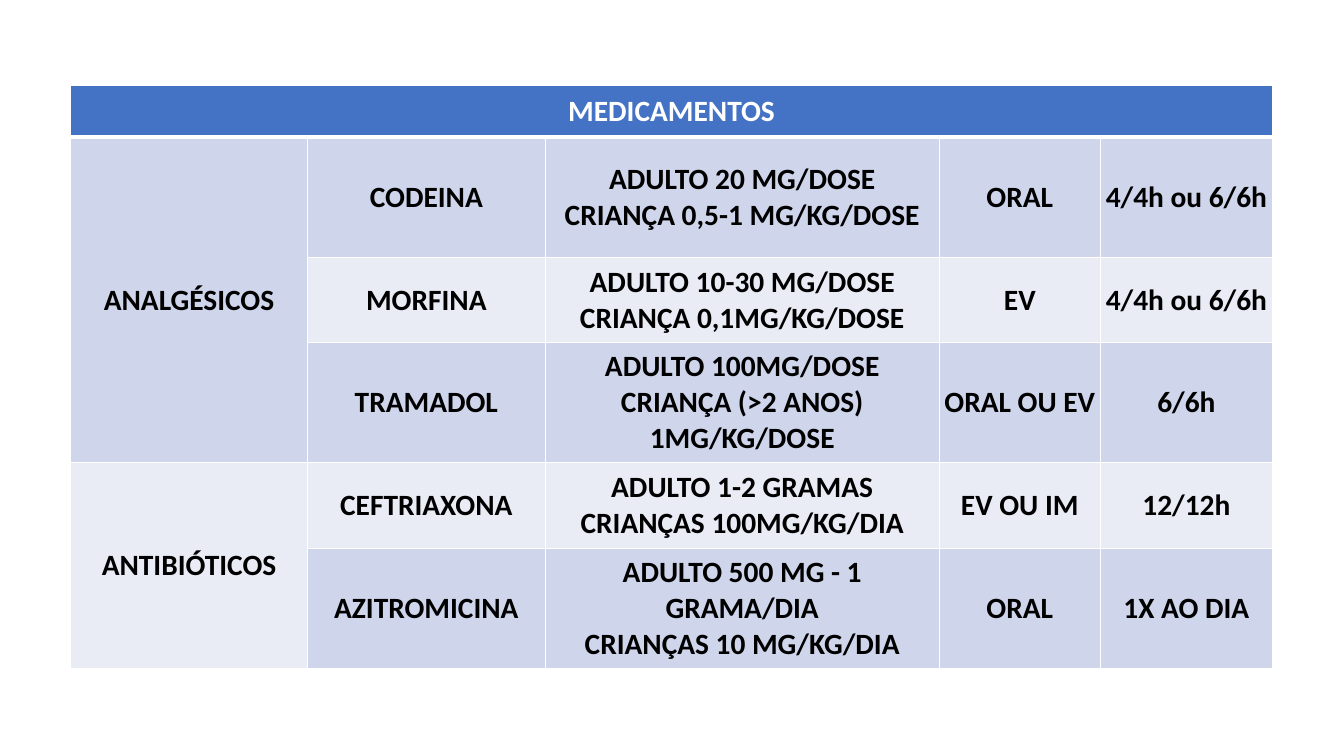
import pptx
import pptx.dml.color
import pptx.enum.text
import pptx.oxml
import pptx.oxml.ns
import pptx.util

Cm = pptx.util.Cm
Pt = pptx.util.Pt

WHITE, BLACK, BLUE = "FFFFFF", "000000", "4472C4"
BANDS = ["CFD5EA", "E9EBF5"]
COLS = [5.97, 5.99, 9.93, 4.06, 4.34]
ROWS = [1.3, 3.02, 2.16, 3.02, 2.16, 3.02]

# Group name, then its drugs: name, dose, route, interval
GROUPS = [
    ("ANALGÉSICOS", [
        ("CODEINA", "ADULTO 20 MG/DOSE\nCRIANÇA 0,5-1 MG/KG/DOSE",
         "ORAL", "4/4h ou 6/6h"),
        ("MORFINA", "ADULTO 10-30 MG/DOSE\nCRIANÇA 0,1MG/KG/DOSE",
         "EV", "4/4h ou 6/6h"),
        ("TRAMADOL", "ADULTO 100MG/DOSE\nCRIANÇA (>2 ANOS) 1MG/KG/DOSE",
         "ORAL OU EV", "6/6h"),
    ]),
    ("ANTIBIÓTICOS", [
        ("CEFTRIAXONA", "ADULTO 1-2 GRAMAS\nCRIANÇAS 100MG/KG/DIA",
         "EV OU IM", "12/12h"),
        ("AZITROMICINA", "ADULTO 500 MG - 1 GRAMA/DIA\nCRIANÇAS 10 MG/KG/DIA",
         "ORAL", "1X AO DIA"),
    ]),
]


def paint(fill, tone):
    fill.solid()
    fill.fore_color.rgb = pptx.dml.color.RGBColor.from_string(tone)


def add_edge(cell, side, width):
    props = cell._tc.get_or_add_tcPr()
    props.append(pptx.oxml.parse_xml(
        f'<a:ln{side} {pptx.oxml.ns.nsdecls("a")} w="{Pt(width)}">'
        f'<a:solidFill><a:srgbClr val="{WHITE}"/></a:solidFill></a:ln{side}>'))


def style_cell(cell, tone, top=1, base=1):
    cell.margin_left = cell.margin_right = Cm(0.1)
    cell.margin_top = cell.margin_bottom = Cm(0.1)
    cell.vertical_anchor = pptx.enum.text.MSO_ANCHOR.MIDDLE
    # Edges come before the fill in the cell's properties
    for side, width in zip("LRTB", (1, 1, top, base)):
        add_edge(cell, side, width)
    paint(cell.fill, tone)


def write(cell, text, tone=BLACK):
    cell.text_frame.text = text
    for para in cell.text_frame.paragraphs:
        para.alignment = pptx.enum.text.PP_ALIGN.CENTER
        for run in para.runs:
            run.font.name = "Calibri"
            run.font.size = Pt(21)
            run.font.bold = True
            paint(run.font.fill, tone)


def add_grid(slide):
    frame = slide.shapes.add_table(
        len(ROWS), len(COLS), Cm(1.78), Cm(2.16), Cm(sum(COLS)), Cm(sum(ROWS)))
    table = frame.table
    for col, width in zip(table.columns, COLS):
        col.width = Cm(width)
    for row, height in zip(table.rows, ROWS):
        row.height = Cm(height)
    return table


def fill_head(table):
    for col in range(len(COLS)):
        style_cell(table.cell(0, col), BLUE, base=3)
    table.cell(0, 0).merge(table.cell(0, len(COLS) - 1))
    write(table.cell(0, 0), "MEDICAMENTOS", WHITE)


def fill_group(table, first, name, drugs):
    for row, drug in enumerate(drugs, first):
        for col in range(len(COLS)):
            style_cell(table.cell(row, col), BANDS[(row - 1) % 2],
                       top=3 if row == 1 else 1)
        for col, text in enumerate(drug, 1):
            write(table.cell(row, col), text)
    table.cell(first, 0).merge(table.cell(first + len(drugs) - 1, 0))
    write(table.cell(first, 0), name)


def main():
    deck = pptx.Presentation()
    deck.slide_width, deck.slide_height = Cm(33.87), Cm(19.05)
    slide = deck.slides.add_slide(deck.slide_layouts[6])

    # Drug table: heading row, then one block per group
    table = add_grid(slide)
    fill_head(table)
    first = 1
    for name, drugs in GROUPS:
        fill_group(table, first, name, drugs)
        first += len(drugs)

    deck.save("out.pptx")


if __name__ == "__main__":
    main()
